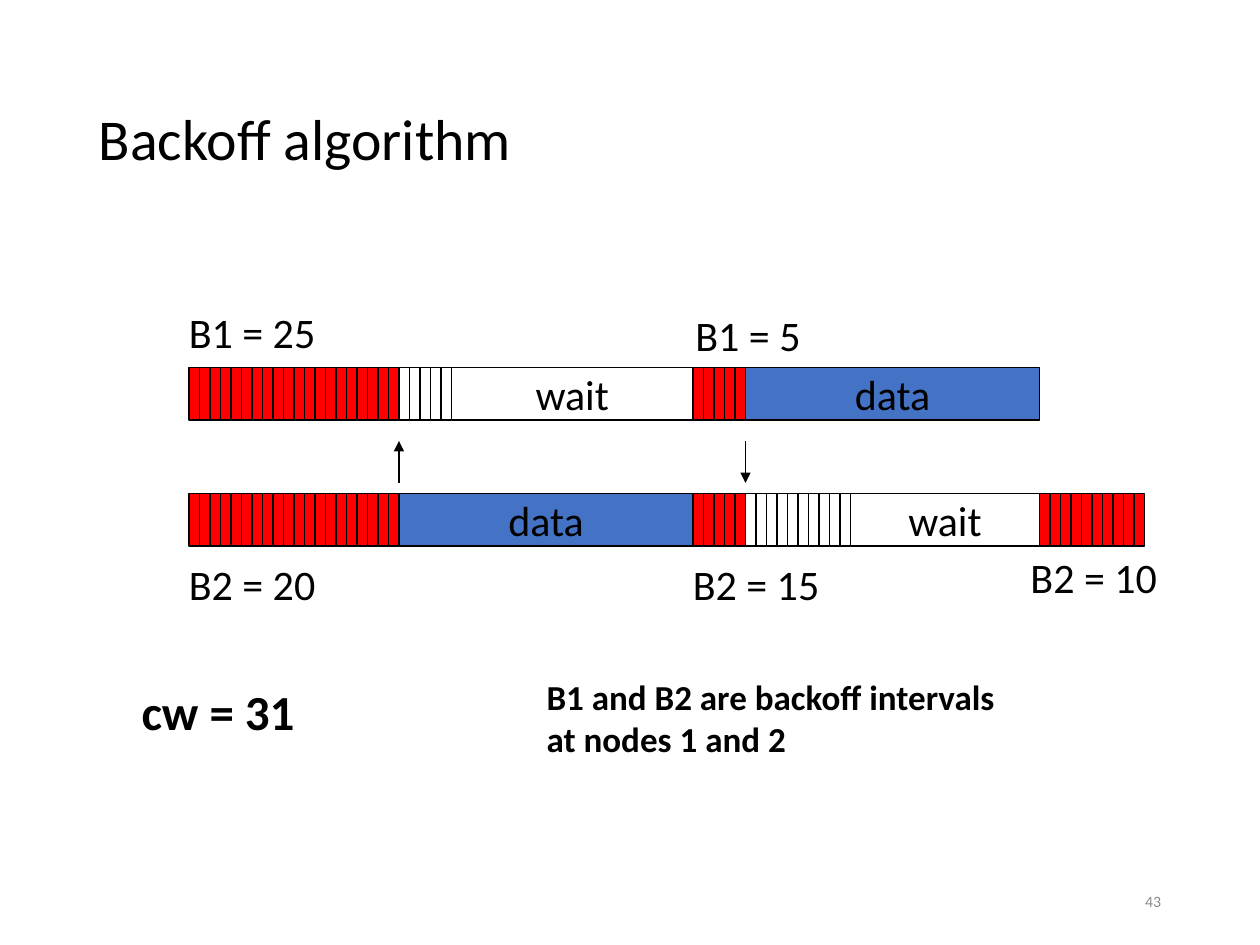
from lxml import etree
from pptx import Presentation
from pptx import util as u
from pptx.dml.color import RGBColor
from pptx.enum import shapes, text
from pptx.oxml.ns import qn

BLACK, RED, BLUE, GREY = "000000", "FF0000", "4472C4", "8C8C8C"
LINE_WIDTH = 0.75

# Timelines: all lengths are multiples of one backoff slot
START, SLOT, BAR_HEIGHT = 108, 6, 30
NODE_1_TOP, NODE_2_TOP = 210, 282

# Each period: kind, number of slots
NODE_1 = [("count", 20), ("frozen", 5), ("wait", 23), ("count", 5), ("data", 28)]
NODE_2 = [("count", 20), ("data", 28), ("count", 5), ("frozen", 10),
          ("wait", 18), ("count", 10)]
FILLS = {"count": RED, "data": BLUE}

# Backoff values: wording, left, top, width
LABELS = [
    ("B1 = 25", 100.8, 171.36, 98),
    ("B1 = 5", 390.24, 173.5, 84),
    ("B2 = 20", 100.8, 315.36, 98),
    ("B2 = 15", 388.8, 315.36, 98),
    ("B2 = 10", 581.76, 311.76, 98),
]


def color(hex_string):
    return RGBColor.from_string(hex_string)


def points(*lengths):
    return [u.Pt(length) for length in lengths]


def write(shape, lines, size=24, font_color=BLACK, bold=False,
          align=text.PP_ALIGN.LEFT, anchor=text.MSO_ANCHOR.TOP,
          wrap=True, spacing=1.0):
    frame = shape.text_frame
    frame.word_wrap = wrap
    frame.vertical_anchor = anchor
    font_format = {"name": "Calibri", "size": u.Pt(size), "bold": bold}
    for index, line in enumerate(lines):
        paragraph = frame.paragraphs[0] if index == 0 else frame.add_paragraph()
        paragraph.text = line
        paragraph.alignment = align
        paragraph.line_spacing = spacing
        for name, value in font_format.items():
            setattr(paragraph.font, name, value)
        paragraph.font.color.rgb = color(font_color)


def add_text(slide, lines, left, top, width, height, **style):
    box = slide.shapes.add_textbox(*points(left, top, width, height))
    write(box, lines, **style)


def add_bar(slide, left, top, width, fill=None, caption=None):
    shape = slide.shapes.add_shape(shapes.MSO_SHAPE.RECTANGLE,
                                   *points(left, top, width, BAR_HEIGHT))
    shape.shadow.inherit = False
    if fill:
        shape.fill.solid()
        shape.fill.fore_color.rgb = color(fill)
    else:
        shape.fill.background()
    shape.line.color.rgb = color(BLACK)
    shape.line.width = u.Pt(LINE_WIDTH)
    if caption:
        write(shape, [caption], align=text.PP_ALIGN.CENTER,
              anchor=text.MSO_ANCHOR.MIDDLE, wrap=False)


def add_timeline(slide, top, periods):
    left = START
    for kind, slots in periods:
        width = slots * SLOT
        if kind in ("data", "wait"):
            add_bar(slide, left, top, width, FILLS.get(kind), kind)
        else:
            for index in range(slots):
                add_bar(slide, left + index * SLOT, top, SLOT, FILLS.get(kind))
        left += width


def add_arrow(slide, x, start, end):
    arrow = slide.shapes.add_connector(shapes.MSO_CONNECTOR.STRAIGHT,
                                       *points(x, start, x, end))
    arrow.line.color.rgb = color(BLACK)
    arrow.line.width = u.Pt(LINE_WIDTH)
    etree.SubElement(arrow.line._get_or_add_ln(), qn("a:tailEnd"), type="triangle")
    etree.SubElement(arrow._element.spPr, qn("a:effectLst"))


def main():
    presentation = Presentation()
    presentation.slide_width, presentation.slide_height = points(720, 540)
    slide = presentation.slides.add_slide(presentation.slide_layouts[6])
    middle = text.MSO_ANCHOR.MIDDLE

    # Title
    add_text(slide, ["Backoff algorithm"], 49.5, 28.75, 621, 104.4,
             size=33, anchor=middle, spacing=0.9)

    # Timelines of both nodes
    add_timeline(slide, NODE_1_TOP, NODE_1)
    add_timeline(slide, NODE_2_TOP, NODE_2)
    for wording, left, top, width in LABELS:
        add_text(slide, [wording], left, top, width, 36)

    # Arrows from the sending node to the waiting node
    add_arrow(slide, START + 20 * SLOT, 276, 252)
    add_arrow(slide, START + 53 * SLOT, 252, 276)

    # Notes
    add_text(slide, ["B1 and B2 are backoff intervals", "at nodes 1 and 2"],
             305.28, 382.5, 312.5, 55.5, size=20, bold=True, anchor=middle)
    add_text(slide, ["cw = 31"], 67, 386, 115.2, 41, size=28, bold=True,
             align=text.PP_ALIGN.CENTER, anchor=middle)

    # Slide number
    add_text(slide, ["43"], 508.5, 500.5, 162, 28.75, size=9, font_color=GREY,
             align=text.PP_ALIGN.RIGHT, anchor=middle)

    presentation.save("out.pptx")


if __name__ == "__main__":
    main()
